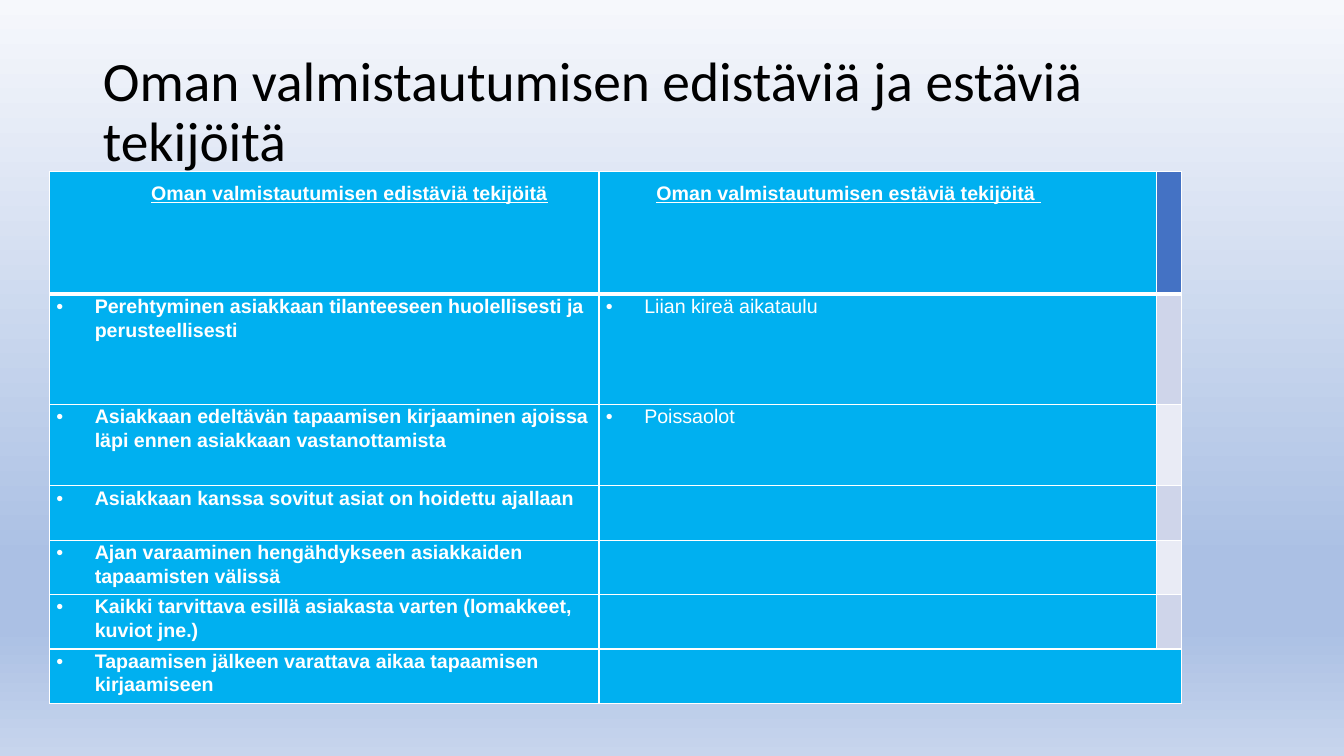
"""Build a slide with a table of factors that help and hinder preparation."""
from pptx import Presentation
from pptx import util as u
from pptx.dml.color import RGBColor
from pptx.enum import text
from pptx.oxml.ns import qn
from lxml import etree

BLACK = RGBColor(0x00, 0x00, 0x00)
WHITE = RGBColor(0xFF, 0xFF, 0xFF)
CYAN = RGBColor(0x00, 0xB0, 0xF0)
HEADER_BLUE = RGBColor(0x44, 0x72, 0xC4)
BANDS = (RGBColor(0xE9, 0xEB, 0xF5), RGBColor(0xCF, 0xD5, 0xEA))
SKY = RGBColor(0xAB, 0xC0, 0xE4)
BACKGROUND = ((0, RGBColor(0xF6, 0xF8, 0xFC)), (74, SKY), (83, SKY),
              (100, RGBColor(0xC7, 0xD5, 0xED)))

TITLE = "Oman valmistautumisen edistäviä ja estäviä tekijöitä"
HEADERS = (
    ("Oman valmistautumisen edistäviä tekijöitä", text.PP_ALIGN.CENTER),
    ("Oman valmistautumisen estäviä tekijöitä ", text.PP_ALIGN.LEFT),
)
FACTORS = (
    ("Perehtyminen asiakkaan tilanteeseen huolellisesti ja perusteellisesti",
     "Liian kireä aikataulu"),
    ("Asiakkaan edeltävän tapaamisen kirjaaminen ajoissa läpi ennen asiakkaan vastanottamista",
     "Poissaolot"),
    ("Asiakkaan kanssa sovitut asiat on hoidettu ajallaan", ""),
    ("Ajan varaaminen hengähdykseen asiakkaiden tapaamisten välissä", ""),
    ("Kaikki tarvittava esillä asiakasta varten (lomakkeet, kuviot jne.)", ""),
    ("Tapaamisen jälkeen varattava aikaa tapaamisen kirjaamiseen", ""),
)
COLUMN_WIDTHS = (5.45, 5.53, 0.25)
ROW_HEIGHTS = (1.22, 1.09, 0.81) + (0.54,) * 4


def apply_format(target, values):
    for name, value in values.items():
        setattr(target, name, value)


def add_solid_fill(parent, color):
    fill = etree.SubElement(parent, qn("a:solidFill"))
    etree.SubElement(fill, qn("a:srgbClr"), val=str(color))


def set_background(slide):
    fill = slide.background.fill
    fill.gradient()
    fill.gradient_angle = 270
    stops = next(slide.element.iter(qn("a:gsLst")))
    for stop in list(stops):
        stops.remove(stop)
    for percent, color in BACKGROUND:
        stop = etree.SubElement(stops, qn("a:gs"), pos=str(percent * 1000))
        etree.SubElement(stop, qn("a:srgbClr"), val=str(color))


def set_title(slide):
    title = slide.shapes.title
    apply_format(title, {"left": u.Inches(0.92), "top": u.Inches(0.4),
                         "width": u.Inches(11.5), "height": u.Inches(1.45)})
    frame = title.text_frame
    apply_format(frame, {"text": TITLE, "word_wrap": True,
                         "auto_size": text.MSO_AUTO_SIZE.NONE,
                         "vertical_anchor": text.MSO_ANCHOR.MIDDLE})
    paragraph = frame.paragraphs[0]
    apply_format(paragraph, {"alignment": text.PP_ALIGN.LEFT, "line_spacing": 0.9})
    apply_format(paragraph.font, {"name": "Calibri", "size": u.Pt(39.6)})
    paragraph.font.color.rgb = BLACK


def style_cell(cell, color, bottom_width=1):
    apply_format(cell, {"margin_left": u.Inches(0.07), "margin_right": u.Inches(0.07),
                        "margin_top": 0, "margin_bottom": 0})
    properties = cell._tc.get_or_add_tcPr()
    for side, width in (("L", 1), ("R", 1), ("T", 1), ("B", bottom_width)):
        line = etree.SubElement(properties, qn(f"a:ln{side}"), w=str(u.Pt(width)))
        add_solid_fill(line, WHITE)
    cell.fill.solid()
    cell.fill.fore_color.rgb = color


def write_cell(cell, words, spacing, indent, hanging=0, alignment=text.PP_ALIGN.LEFT,
               bold=True, underline=False):
    paragraph = cell.text_frame.paragraphs[0]
    run = paragraph.add_run()
    run.text = words
    apply_format(paragraph, {"alignment": alignment, "line_spacing": spacing})
    apply_format(run.font, {"name": "Arial", "size": u.Pt(14), "bold": bold,
                            "underline": underline})
    run.font.color.rgb = WHITE
    properties = paragraph._p.get_or_add_pPr()
    properties.set("marL", str(u.Inches(indent)))
    properties.set("indent", str(-u.Inches(hanging)))
    if hanging:
        etree.SubElement(properties, qn("a:buFont"), typeface="Arial")
        etree.SubElement(properties, qn("a:buChar"), char="•")


def add_factor_table(slide):
    frame = slide.shapes.add_table(
        len(ROW_HEIGHTS), len(COLUMN_WIDTHS), u.Inches(0.49), u.Inches(1.7),
        u.Inches(sum(COLUMN_WIDTHS)), u.Inches(sum(ROW_HEIGHTS)))
    table = frame.table
    for column, width in zip(table.columns, COLUMN_WIDTHS):
        column.width = u.Inches(width)
    for row, height in zip(table.rows, ROW_HEIGHTS):
        row.height = u.Inches(height)
    last_row = len(FACTORS)
    table.cell(last_row, 1).merge(table.cell(last_row, 2))

    for row in range(last_row + 1):
        edge_color = BANDS[row % 2] if row else HEADER_BLUE
        for column, color in enumerate((CYAN, CYAN, edge_color)):
            style_cell(table.cell(row, column), color, 1 if row else 3)

    for column, (words, alignment) in enumerate(HEADERS):
        write_cell(table.cell(0, column), words, 1.5, 0.5,
                   alignment=alignment, underline=True)
    for row, factors in enumerate(FACTORS, 1):
        for column, words in enumerate(factors):
            if words:
                write_cell(table.cell(row, column), words, 1.07, 0.38,
                           hanging=0.38, bold=column == 0)


def main():
    presentation = Presentation()
    apply_format(presentation, {"slide_width": u.Inches(13.33),
                                "slide_height": u.Inches(7.5)})
    slide = presentation.slides.add_slide(presentation.slide_layouts[5])
    set_background(slide)
    set_title(slide)
    add_factor_table(slide)
    presentation.save("out.pptx")


if __name__ == "__main__":
    main()
